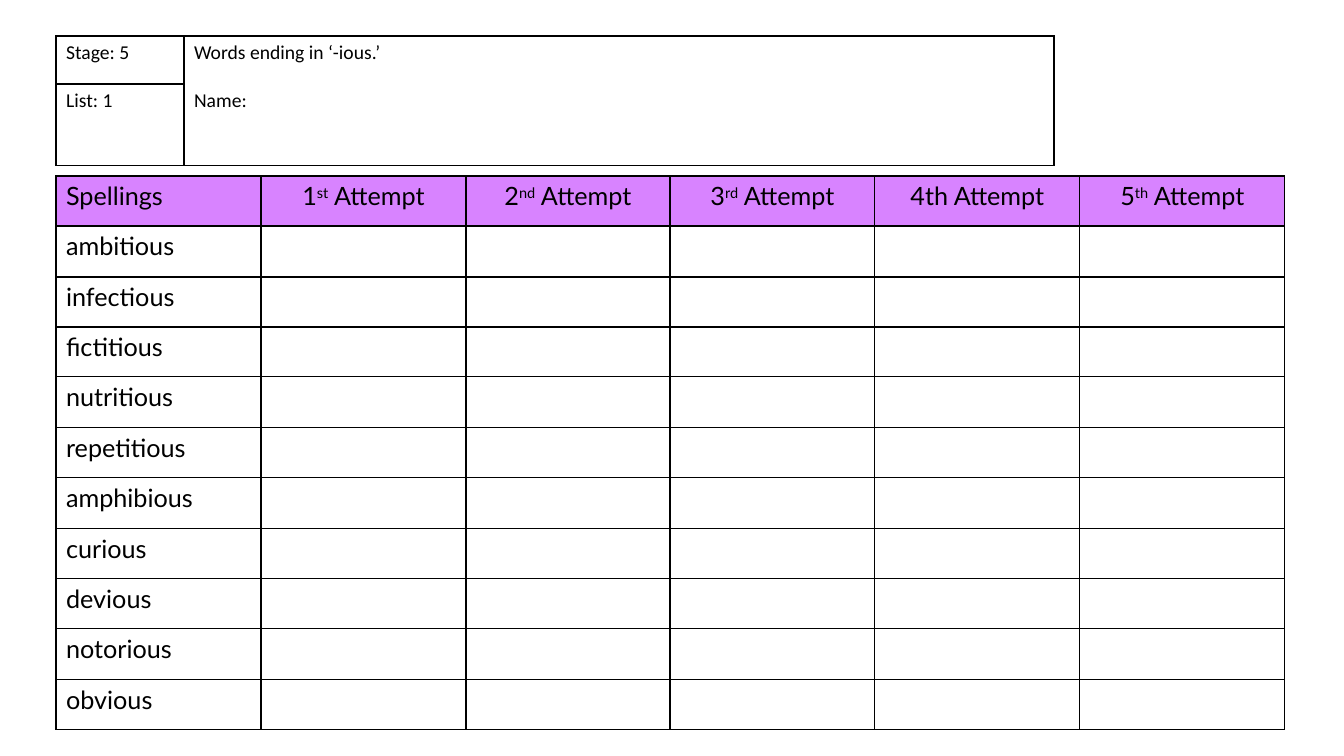
from dataclasses import dataclass
from typing import NamedTuple

from lxml import etree
from pptx import Presentation
from pptx.dml.color import RGBColor
from pptx.enum.text import PP_ALIGN
from pptx.oxml.ns import qn
from pptx.slide import Slide
from pptx.table import Table, _Cell
from pptx.util import Emu, Pt

EMU_PER_PX = 914400 / 100.8
BLACK = RGBColor(0x00, 0x00, 0x00)
PURPLE = RGBColor(0xD8, 0x83, 0xFF)
LEFT, CENTER = PP_ALIGN.LEFT, PP_ALIGN.CENTER
PLAIN_TABLE_STYLE = "{2D5ABB26-0587-4C30-8999-92F81FD0307C}"
BORDER_WIDTH = Pt(1)
BORDER_SIDES = ("a:lnL", "a:lnR", "a:lnT", "a:lnB")
SUPERSCRIPT = "30000"


class Ordinal(NamedTuple):
    number: str
    suffix: str
    raised: bool = True


class TextStyle(NamedTuple):
    font: str
    size: int


@dataclass(frozen=True)
class Grid:
    left: int
    top: int
    column_widths: list[int]
    row_heights: list[int]


def px(length: int) -> Emu:
    return Emu(round(length * EMU_PER_PX))


def split_evenly(total: int, parts: int) -> list[int]:
    edges = [round(total * i / parts) for i in range(parts + 1)]
    return [end - start for start, end in zip(edges, edges[1:])]


HEADING_GRID = Grid(56, 36, [128, 870], [48, 48])
HEADING_STYLE = TextStyle("Calibri", 14)
NAME_GAP = Pt(17)

SPELLING_STYLE = TextStyle("Lato", 18)
SPELLINGS = [
    "ambitious", "infectious", "fictitious", "nutritious", "repetitious",
    "amphibious", "curious", "devious", "notorious", "obvious",
]
ATTEMPTS = [
    Ordinal("1", "st"),
    Ordinal("2", "nd"),
    Ordinal("3", "rd"),
    Ordinal("4", "th", raised=False),
    Ordinal("5", "th"),
]
SPELLING_GRID = Grid(
    56, 176,
    split_evenly(1229, len(ATTEMPTS) + 1),
    split_evenly(554, len(SPELLINGS) + 1),
)


def outline_cell(cell: _Cell) -> None:
    properties = cell._tc.get_or_add_tcPr()
    for side in BORDER_SIDES:
        border = etree.SubElement(properties, qn(side), w=str(BORDER_WIDTH))
        fill = etree.SubElement(border, qn("a:solidFill"))
        etree.SubElement(fill, qn("a:srgbClr"), val=str(BLACK))
    cell.fill.background()


def add_grid(slide: Slide, grid: Grid) -> Table:
    table = slide.shapes.add_table(
        len(grid.row_heights), len(grid.column_widths),
        px(grid.left), px(grid.top),
        px(sum(grid.column_widths)), px(sum(grid.row_heights)),
    ).table
    table.first_row = False
    table.horz_banding = False
    table._tbl.tblPr.find(qn("a:tableStyleId")).text = PLAIN_TABLE_STYLE
    for column, width in zip(table.columns, grid.column_widths):
        column.width = px(width)
    for row, height in zip(table.rows, grid.row_heights):
        row.height = px(height)
    for cell in table.iter_cells():
        outline_cell(cell)
    return table


def style_cell(cell: _Cell, style: TextStyle, alignment: PP_ALIGN = LEFT) -> None:
    for paragraph in cell.text_frame.paragraphs:
        paragraph.alignment = alignment
        paragraph.font.name = style.font
        paragraph.font.size = Pt(style.size)
        paragraph.font.color.rgb = BLACK


def write_attempt(cell: _Cell, ordinal: Ordinal) -> None:
    paragraph = cell.text_frame.paragraphs[0]
    if ordinal.raised:
        paragraph.add_run().text = ordinal.number
        suffix = paragraph.add_run()
        suffix.text = ordinal.suffix
        suffix._r.get_or_add_rPr().set("baseline", SUPERSCRIPT)
        paragraph.add_run().text = " Attempt"
    else:
        paragraph.add_run().text = f"{ordinal.number}{ordinal.suffix} Attempt"
    style_cell(cell, SPELLING_STYLE, CENTER)


def add_spelling_table(slide: Slide) -> None:
    table = add_grid(slide, SPELLING_GRID)
    for row, word in enumerate(["Spellings", *SPELLINGS]):
        word_cell = table.cell(row, 0)
        word_cell.text = word
        style_cell(word_cell, SPELLING_STYLE)
    for column, ordinal in enumerate(ATTEMPTS, start=1):
        write_attempt(table.cell(0, column), ordinal)
    for header_cell in table.rows[0].cells:
        header_cell.fill.solid()
        header_cell.fill.fore_color.rgb = PURPLE


def add_heading_table(slide: Slide) -> None:
    table = add_grid(slide, HEADING_GRID)
    stage, topic, list_number = table.cell(0, 0), table.cell(0, 1), table.cell(1, 0)
    topic.merge(table.cell(1, 1))
    stage.text = "Stage: 5"
    list_number.text = "List: 1"
    topic.text = "Words ending in ‘-ious.’\nName:"
    for cell in (stage, list_number, topic):
        style_cell(cell, HEADING_STYLE)
    topic.text_frame.paragraphs[1].space_before = NAME_GAP


def main() -> None:
    presentation = Presentation()
    presentation.slide_width = px(1344)
    presentation.slide_height = px(756)
    slide = presentation.slides.add_slide(presentation.slide_layouts[6])
    add_spelling_table(slide)
    add_heading_table(slide)
    presentation.save("out.pptx")


if __name__ == "__main__":
    main()
